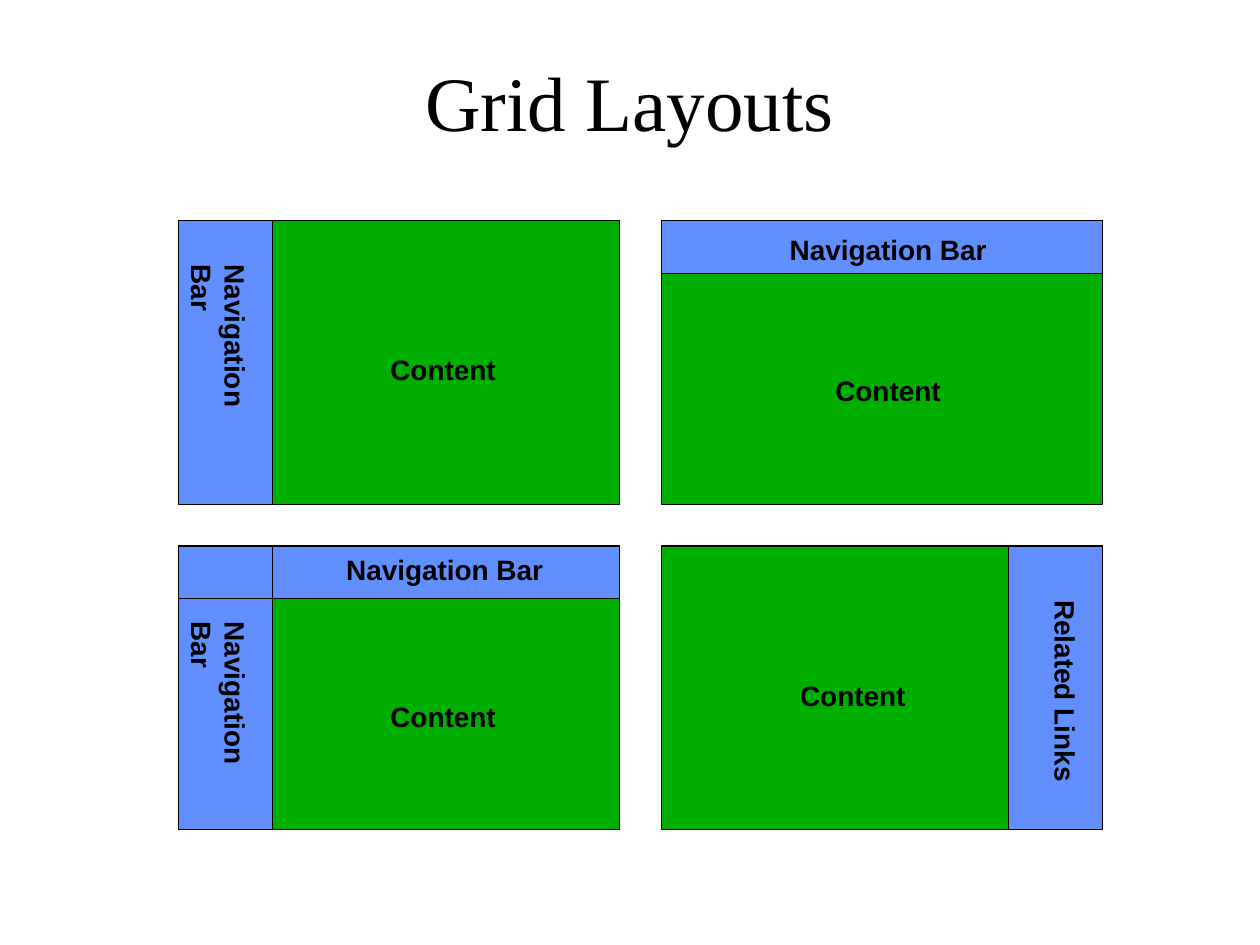
from pptx import Presentation
from pptx import util as u
from pptx.dml.color import RGBColor
from pptx.enum import shapes, text

BLACK = RGBColor(0x00, 0x00, 0x00)
GREEN = RGBColor(0x00, 0xAE, 0x00)
BLUE = RGBColor(0x61, 0x8F, 0xFD)

LEFT, RIGHT = 3.6, 13.34
TOP, BOTTOM = 4.45, 11.01
PAGE_W, PAGE_H = 8.89, 5.72
SIDE_W, BAR_H = 1.9, 1.06

prs = Presentation()
prs.slide_width, prs.slide_height = u.Cm(25.4), u.Cm(19.05)
slide = prs.slides.add_slide(prs.slide_layouts[5])

title = slide.shapes.title
title.left, title.top, title.width, title.height = map(u.Cm, (1.9, 0.43, 21.59, 3.18))
title.text_frame.text = "Grid Layouts"
title.text_frame.vertical_anchor = text.MSO_ANCHOR.MIDDLE
heading = title.text_frame.paragraphs[0]
heading.alignment = text.PP_ALIGN.CENTER
heading.font.size = u.Pt(44)
heading.font.name = "Times New Roman"
heading.font.color.rgb = BLACK


def add_region(x, y, w, h, color):
    region = slide.shapes.add_shape(shapes.MSO_SHAPE.RECTANGLE, *map(u.Cm, (x, y, w, h)))
    region.shadow.inherit = False
    region.fill.solid()
    region.fill.fore_color.rgb = color
    region.line.color.rgb = BLACK
    region.line.width = u.Pt(0.75)


def add_label(wording, x, y, w, h, vertical=False):
    label = slide.shapes.add_textbox(*map(u.Cm, (x, y, w, h)))
    frame = label.text_frame
    frame.text = wording
    frame.word_wrap = vertical
    frame.auto_size = text.MSO_AUTO_SIZE.SHAPE_TO_FIT_TEXT
    if vertical:
        label.element.txBody.bodyPr.set("vert", "eaVert")
    font = frame.paragraphs[0].font
    font.size = u.Pt(16)
    font.name = "Arial"
    font.bold = True
    font.color.rgb = BLACK


for page_top in (TOP, BOTTOM):
    for page_left in (LEFT, RIGHT):
        add_region(page_left, page_top, PAGE_W, PAGE_H, GREEN)

for x, y, w, h in (
    (LEFT, TOP, SIDE_W, PAGE_H),
    (RIGHT, TOP, PAGE_W, BAR_H),
    (LEFT, BOTTOM, SIDE_W, PAGE_H),
    (LEFT, BOTTOM, PAGE_W, BAR_H),
    (LEFT, BOTTOM, SIDE_W, BAR_H),
    (RIGHT + PAGE_W - SIDE_W, BOTTOM, SIDE_W, PAGE_H),
):
    add_region(x, y, w, h, BLUE)

for x, y in ((7.62, 6.99), (16.59, 7.41), (7.62, 13.97), (15.88, 13.55)):
    add_label("Content", x, y, 2.64, 0.93)

for x, y in ((15.67, 4.57), (6.73, BOTTOM)):
    add_label("Navigation Bar", x, y, 4.5, 0.93)

for wording, x, y in (
    ("Navigation Bar", 4.02, 5.08),
    ("Navigation Bar", 4.02, 12.28),
    ("Related Links", 20.75, 11.85),
):
    add_label(wording, x, y, 1.2, 4.45, vertical=True)

prs.save("out.pptx")
